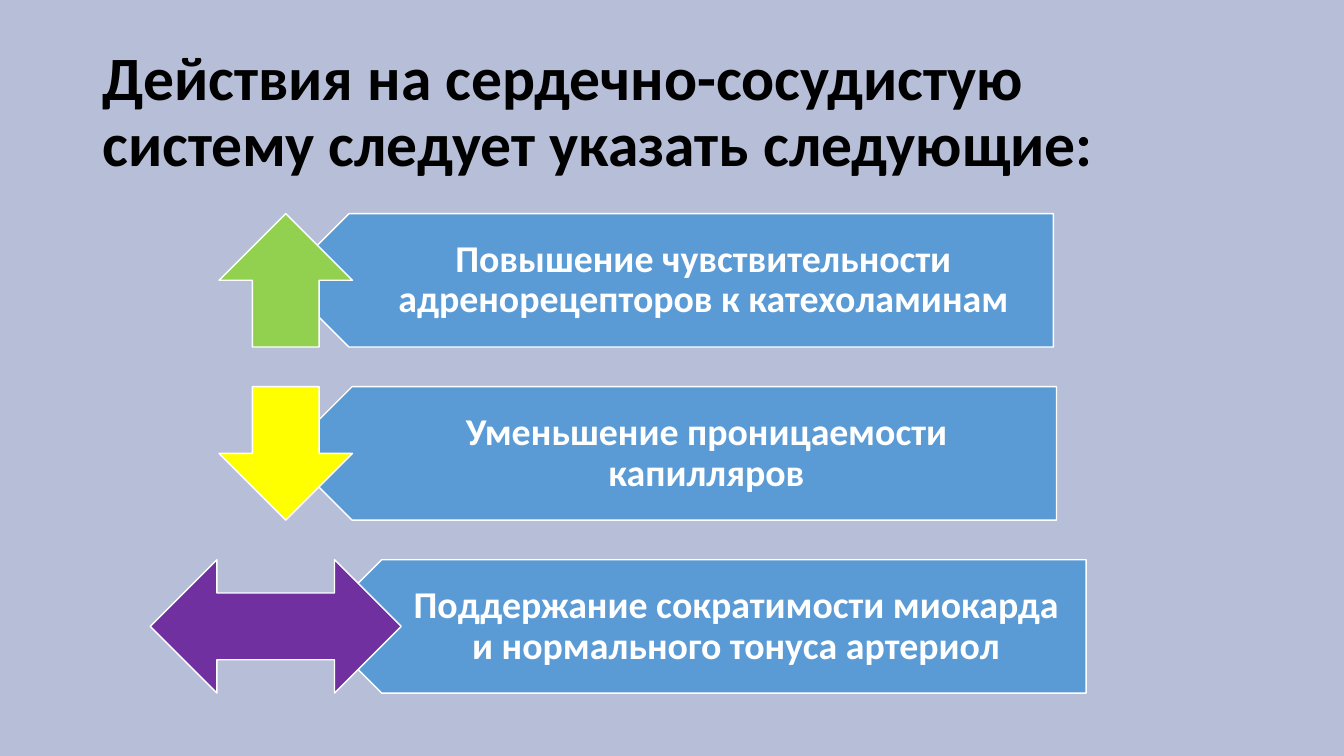
"""Build a slide of three labelled arrows on cardiovascular effects."""
from pptx import Presentation
from pptx.dml.color import RGBColor
from pptx.enum.shapes import MSO_SHAPE as Kind
from pptx.enum.text import MSO_ANCHOR as Anchor, PP_ALIGN as Align
from pptx.util import Pt

BACK = RGBColor(0xB7, 0xBE, 0xD7)
BLACK = RGBColor(0, 0, 0)
WHITE = RGBColor(255, 255, 255)
BLUE = RGBColor(0x5B, 0x9B, 0xD5)
GREEN = RGBColor(0x92, 0xD0, 0x50)
YELLOW = RGBColor(255, 255, 0)
PURPLE = RGBColor(0x70, 0x30, 0xA0)

TITLE = "Действия на сердечно-сосудистую систему следует указать следующие:"
ROWS = [
    ("Повышение чувствительности адренорецепторов к катехоламинам",
     201.6, Kind.UP_ARROW, GREEN, 156.5, 95.3),
    ("Уменьшение проницаемости капилляров",
     203.8, Kind.DOWN_ARROW, YELLOW, 156.5, 95.3),
    ("Поддержание сократимости миокарда и нормального тонуса артериол",
     225, Kind.LEFT_RIGHT_ARROW, PURPLE, 107.3, 179.3),
]
TOP, STEP, HIGH = 152.6, 123.6, 95.3
BAR, SHIFT = 550.8, 23.8


def add_text(slide, text, box, size, color, align, inset):
    frame = slide.shapes.add_textbox(*map(Pt, box)).text_frame
    frame.word_wrap = True
    frame.vertical_anchor = Anchor.MIDDLE
    (frame.margin_left, frame.margin_top,
     frame.margin_right, frame.margin_bottom) = map(Pt, inset)
    para = frame.paragraphs[0]
    para.alignment = align
    para.line_spacing = 0.9
    run = para.add_run()
    run.text = text
    font = run.font
    font.name, font.size, font.bold = "Calibri", Pt(size), True
    font.color.rgb = color


def add_shape(slide, kind, box, fill):
    shape = slide.shapes.add_shape(kind, *map(Pt, box))
    shape.shadow.inherit = False
    shape.fill.solid()
    shape.fill.fore_color.rgb = fill
    shape.line.color.rgb = WHITE
    shape.line.width = Pt(1)
    return shape


def main():
    deck = Presentation()
    deck.slide_width, deck.slide_height = Pt(960), Pt(540)
    slide = deck.slides.add_slide(deck.slide_layouts[6])
    fill = slide.background.fill
    fill.solid()
    fill.fore_color.rgb = BACK

    add_text(slide, TITLE, (66, 28.8, 828, 104.4), 44, BLACK,
             Align.LEFT, (7.2, 3.6, 14.4, 3.6))
    for row, (text, left, kind, color, start, wide) in enumerate(ROWS):
        top = TOP + row * STEP
        bar = add_shape(slide, Kind.PENTAGON, (left, top, BAR, HIGH), BLUE)
        bar.rotation = 180
        add_text(slide, text, (left + SHIFT, top, BAR - SHIFT, HIGH), 27,
                 WHITE, Align.CENTER, (42, 8, 15, 8))
        add_shape(slide, kind, (start, top, wide, HIGH), color)
    deck.save("out.pptx")


if __name__ == "__main__":
    main()
